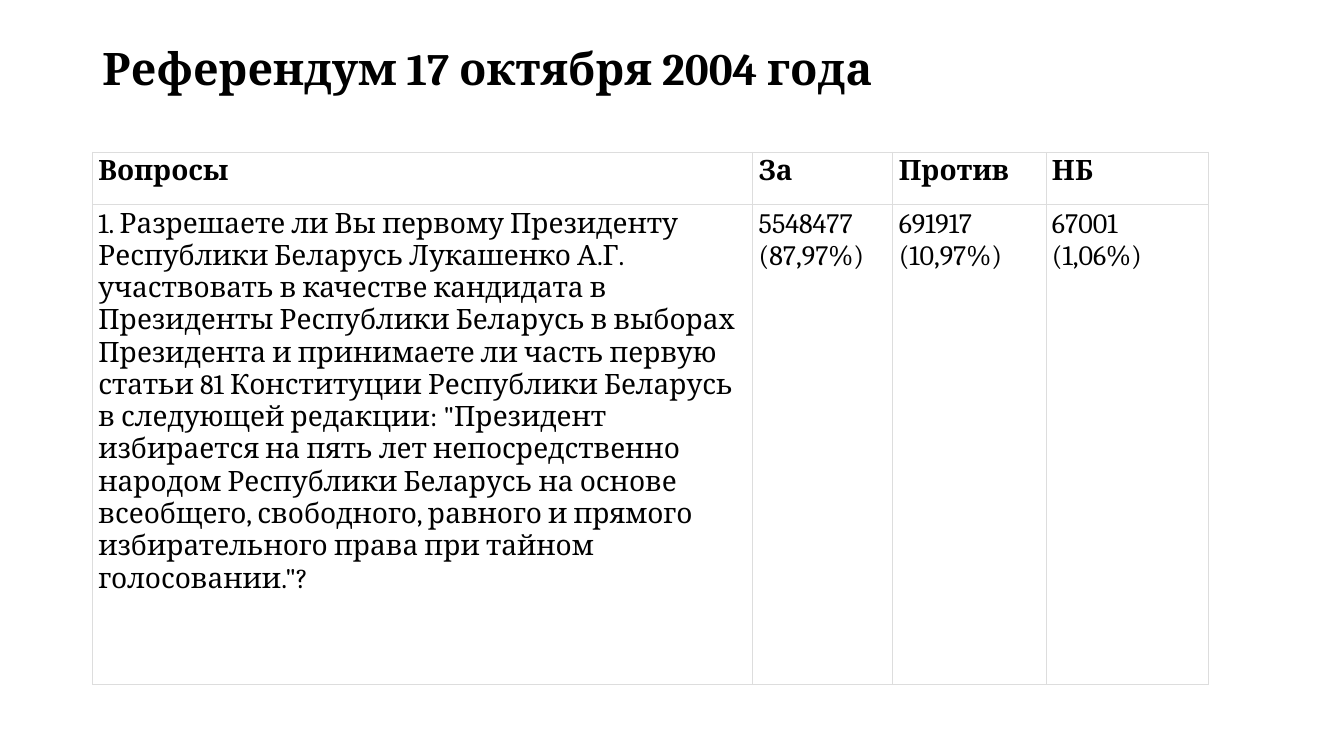
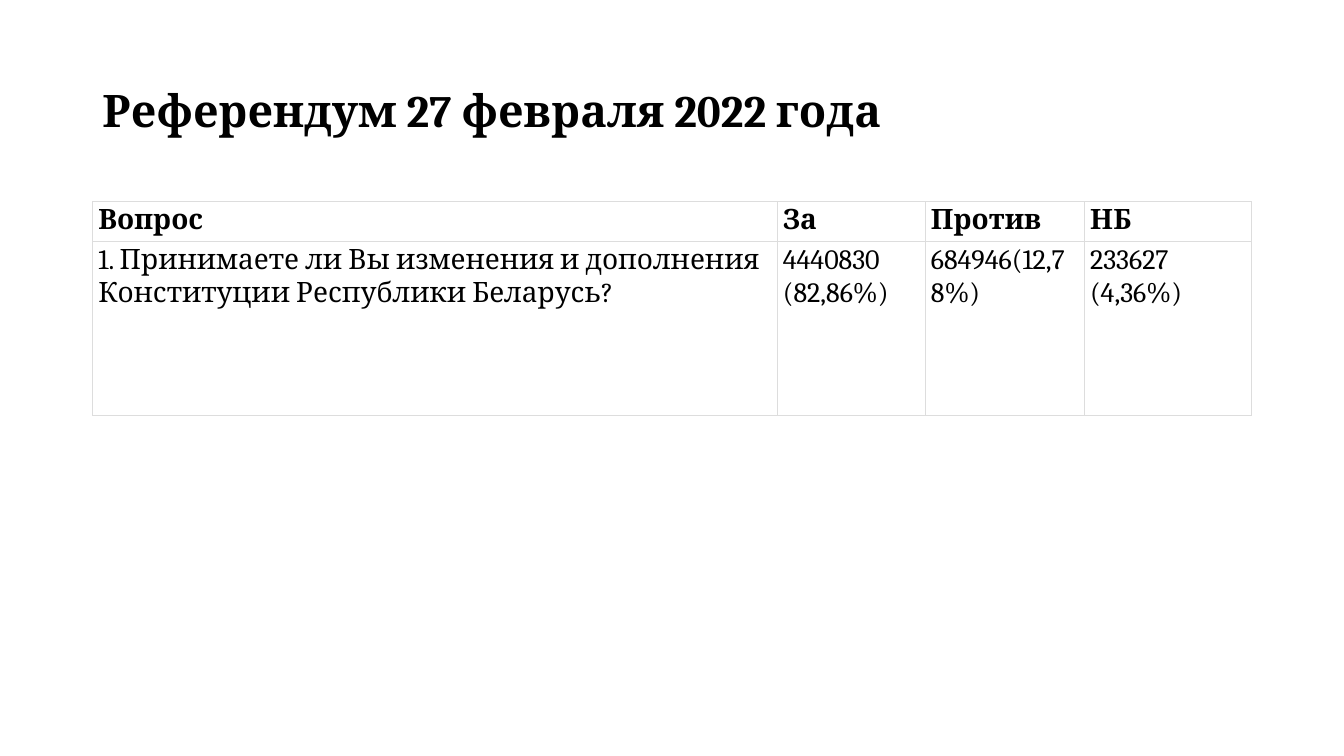
"""Builds two slides with referendum results in tables."""
from lxml.etree import SubElement
from pptx import Presentation
from pptx.dml.color import RGBColor
from pptx.enum.text import MSO_ANCHOR as Anchor
from pptx.oxml.ns import qn
from pptx.util import Cm, Pt

BLACK, WHITE, GRID = "000000", "FFFFFF", "DDDDDD"
LEFT, TITLE_TOP, TITLE_W = 2.33, 1.02, 29.21
TITLE = {"name": "Cambria", "size": Pt(32), "bold": True}
HEAD = {"name": "Cambria", "size": Pt(20), "bold": True}
BODY = {**HEAD, "bold": False}
MARGINS = {"margin_left": Cm(0.15), "margin_right": Cm(0.15),
           "margin_top": Cm(0.08), "margin_bottom": Cm(0.08)}

SLIDES = [
    {
        "title": "Референдум 17 октября 2004 года",
        "title_h": 1.52,
        "top": 3.84,
        "cols": [16.64, 3.53, 3.86, 4.09],
        "rows": [1.32, 12.09],
        "cells": [
            ["Вопросы", "За", "Против", "НБ"],
            ["1. Разрешаете ли Вы первому Президенту Республики Беларусь "
             "Лукашенко А.Г. участвовать в качестве кандидата в Президенты "
             "Республики Беларусь в выборах Президента и принимаете ли часть "
             "первую статьи 81 Конституции Республики Беларусь в следующей "
             "редакции: \"Президент избирается на пять лет непосредственно "
             "народом Республики Беларусь на основе всеобщего, свободного, "
             "равного и прямого избирательного права при тайном "
             "голосовании.\"?",
             "5548477 (87,97%)", "691917 (10,97%)", "67001 (1,06%)"],
        ],
    },
    {
        "title": "Референдум 27 февраля 2022 года",
        "title_h": 3.68,
        "top": 5.08,
        "cols": [17.25, 3.73, 4.01, 4.22],
        "rows": [0.96, 4.37],
        "cells": [
            ["Вопрос", "За", "Против", "НБ"],
            ["1. Принимаете ли Вы изменения и дополнения Конституции "
             "Республики Беларусь?",
             "4440830 (82,86%)", "684946(12,78%)", "233627 (4,36%)"],
        ],
    },
]


def rgb(value):
    """Return a colour from a hex string."""
    return RGBColor.from_string(value)


def write(p, text, style):
    """Add a run of black text in the given style."""
    r = p.add_run()
    r.text = text
    r.font.color.rgb = rgb(BLACK)
    for key, value in style.items():
        setattr(r.font, key, value)


prs = Presentation()
prs.slide_width, prs.slide_height = Cm(33.87), Cm(19.05)

for data in SLIDES:
    s = prs.slides.add_slide(prs.slide_layouts[6])
    s.background.fill.solid()
    s.background.fill.fore_color.rgb = rgb(WHITE)

    sp = s.shapes.add_textbox(Cm(LEFT), Cm(TITLE_TOP), Cm(TITLE_W), Cm(data["title_h"]))
    tf = sp.text_frame
    tf.word_wrap = True
    tf.vertical_anchor = Anchor.MIDDLE
    p = tf.paragraphs[0]
    p.line_spacing = 0.9
    write(p, data["title"], TITLE)

    cols, rows = data["cols"], data["rows"]
    table = s.shapes.add_table(len(rows), len(cols), Cm(LEFT), Cm(data["top"]),
                               Cm(sum(cols)), Cm(sum(rows))).table
    table.horz_banding = False
    for col, width in zip(table.columns, cols):
        col.width = Cm(width)
    for row, height, texts, style in zip(table.rows, rows, data["cells"], (HEAD, BODY)):
        row.height = Cm(height)
        for cell, text in zip(row.cells, texts):
            for key, value in MARGINS.items():
                setattr(cell, key, value)
            tcPr = cell._tc.get_or_add_tcPr()
            for side in ("a:lnL", "a:lnR", "a:lnT", "a:lnB"):
                ln = SubElement(tcPr, qn(side), w=str(Pt(0.75)))
                fill = SubElement(ln, qn("a:solidFill"))
                SubElement(fill, qn("a:srgbClr"), val=GRID)
            cell.fill.solid()
            cell.fill.fore_color.rgb = rgb(WHITE)
            write(cell.text_frame.paragraphs[0], text, style)

prs.save("out.pptx")
